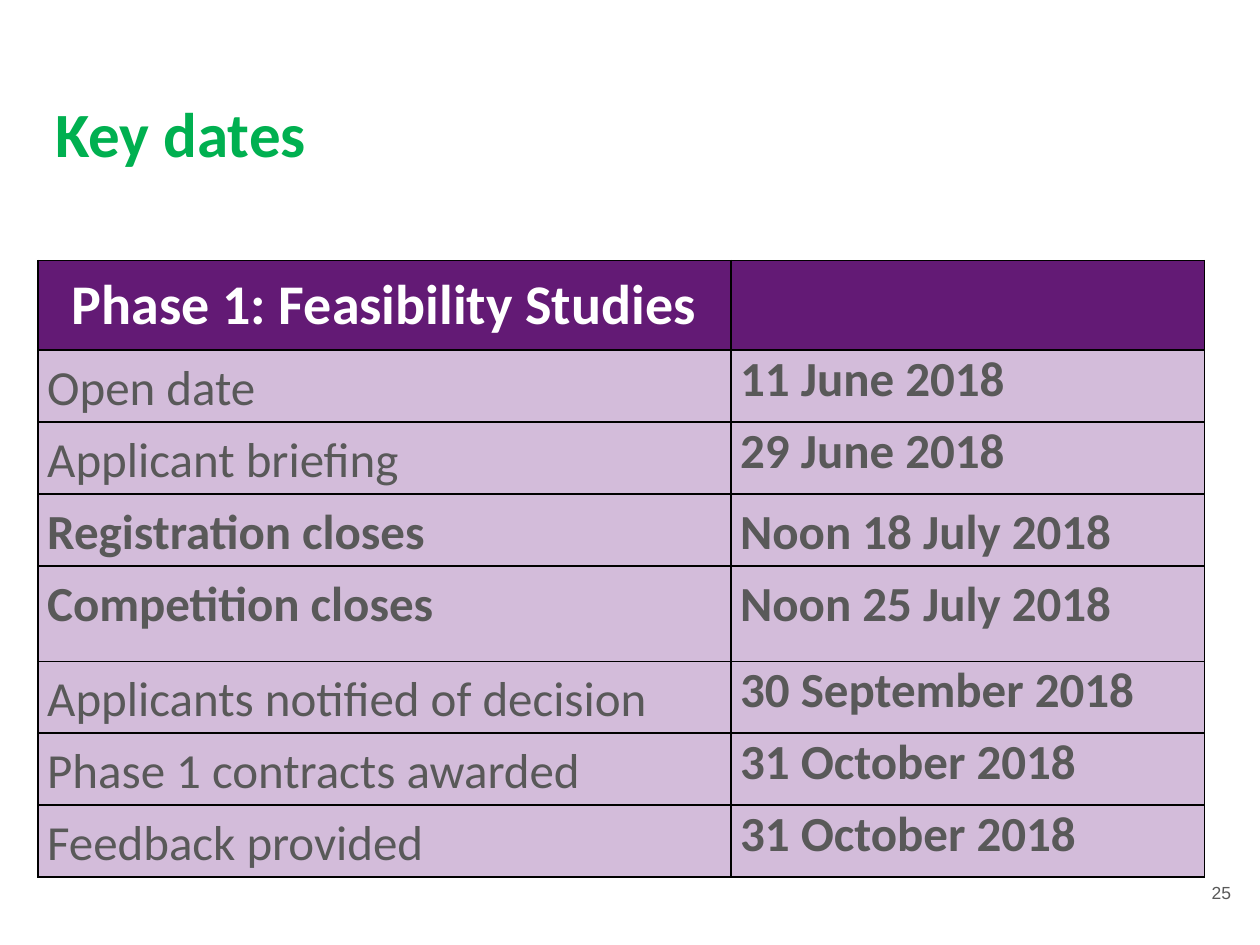
from dataclasses import dataclass

from lxml.etree import SubElement
from pptx import Presentation
from pptx.dml.color import RGBColor
from pptx.enum.text import MSO_ANCHOR, PP_ALIGN
from pptx.oxml.ns import qn
from pptx.slide import Slide
from pptx.table import _Cell
from pptx.text.text import TextFrame
from pptx.util import Pt

COLORS = {"title": "00B050", "header": "631A75", "body": "D3BCDA",
          "text": "595959", "white": "FFFFFF", "border": "000000"}
COLUMNS = (396, 270.72)
HEADER_HEIGHT, ROW_HEIGHT, TALL_HEIGHT = 51, 41.15, 54.5


@dataclass
class KeyDate:
    label: str
    date: str
    closing: bool = False
    height: float = ROW_HEIGHT


DATES = [
    KeyDate("Open date", "11 June 2018"),
    KeyDate("Applicant briefing", "29 June 2018"),
    KeyDate("Registration closes", "Noon 18 July 2018", True),
    KeyDate("Competition closes", "Noon 25 July 2018", True, TALL_HEIGHT),
    KeyDate("Applicants notified of decision", "30 September 2018"),
    KeyDate("Phase 1 contracts awarded", "31 October 2018"),
    KeyDate("Feedback provided", "31 October 2018"),
]


def write(tf: TextFrame, text: str, *, size: float, color: str = "text",
          font: str = "Calibri", bold: bool = False,
          align: PP_ALIGN = PP_ALIGN.LEFT, spacing: float = 1.0) -> None:
    p = tf.paragraphs[0]
    p.alignment, p.line_spacing = align, spacing
    r = p.add_run()
    r.text = text
    r.font.name, r.font.size, r.font.bold = font, Pt(size), bold
    r.font.color.rgb = RGBColor.from_string(COLORS[color])


def add_box(s: Slide, left: float, top: float, width: float, height: float,
            anchor: MSO_ANCHOR = MSO_ANCHOR.TOP) -> TextFrame:
    tf = s.shapes.add_textbox(Pt(left), Pt(top), Pt(width), Pt(height)).text_frame
    tf.word_wrap, tf.vertical_anchor = True, anchor
    tf.margin_left = tf.margin_right = tf.margin_top = tf.margin_bottom = Pt(7.2)
    return tf


def style_cell(cell: _Cell, fill: str) -> None:
    cell.margin_left = cell.margin_right = Pt(5.4)
    cell.margin_top = cell.margin_bottom = Pt(0)
    tcPr = cell._tc.get_or_add_tcPr()
    for side in ("lnL", "lnR", "lnT", "lnB"):
        ln = SubElement(tcPr, qn(f"a:{side}"), w=str(Pt(1)))
        SubElement(SubElement(ln, qn("a:solidFill")), qn("a:srgbClr"), val=COLORS["border"])
    cell.fill.solid()
    cell.fill.fore_color.rgb = RGBColor.from_string(COLORS[fill])


def add_dates_table(s: Slide, left: float, top: float) -> None:
    heights = [HEADER_HEIGHT] + [d.height for d in DATES]
    tbl = s.shapes.add_table(len(heights), len(COLUMNS), Pt(left), Pt(top),
                             Pt(sum(COLUMNS)), Pt(sum(heights))).table
    for col, width in zip(tbl.columns, COLUMNS):
        col.width = Pt(width)
    for i, height in enumerate(heights):
        tbl.rows[i].height = Pt(height)
        for cell in tbl.rows[i].cells:
            style_cell(cell, "body" if i else "header")
    write(tbl.cell(0, 0).text_frame, "Phase 1: Feasibility Studies", size=32,
          color="white", bold=True, align=PP_ALIGN.CENTER, spacing=1.15)
    for i, d in enumerate(DATES, 1):
        write(tbl.cell(i, 0).text_frame, d.label, size=28, bold=d.closing, spacing=1.15)
        write(tbl.cell(i, 1).text_frame, d.date, size=28, bold=True,
              spacing=1.15 if d.closing else 1.0)


def main() -> None:
    """Build the key dates slide."""
    prs = Presentation()
    prs.slide_width, prs.slide_height = Pt(720), Pt(540)
    s = prs.slides.add_slide(prs.slide_layouts[6])
    write(add_box(s, 24.5, 46.8, 671, 60.5), "Key dates", size=36, color="title", bold=True)
    write(add_box(s, 667.4, 489.6, 43.2, 41, MSO_ANCHOR.MIDDLE), "25", size=10,
          font="Arial", align=PP_ALIGN.RIGHT)
    add_dates_table(s, 21.6, 149)
    prs.save("out.pptx")


if __name__ == "__main__":
    main()
